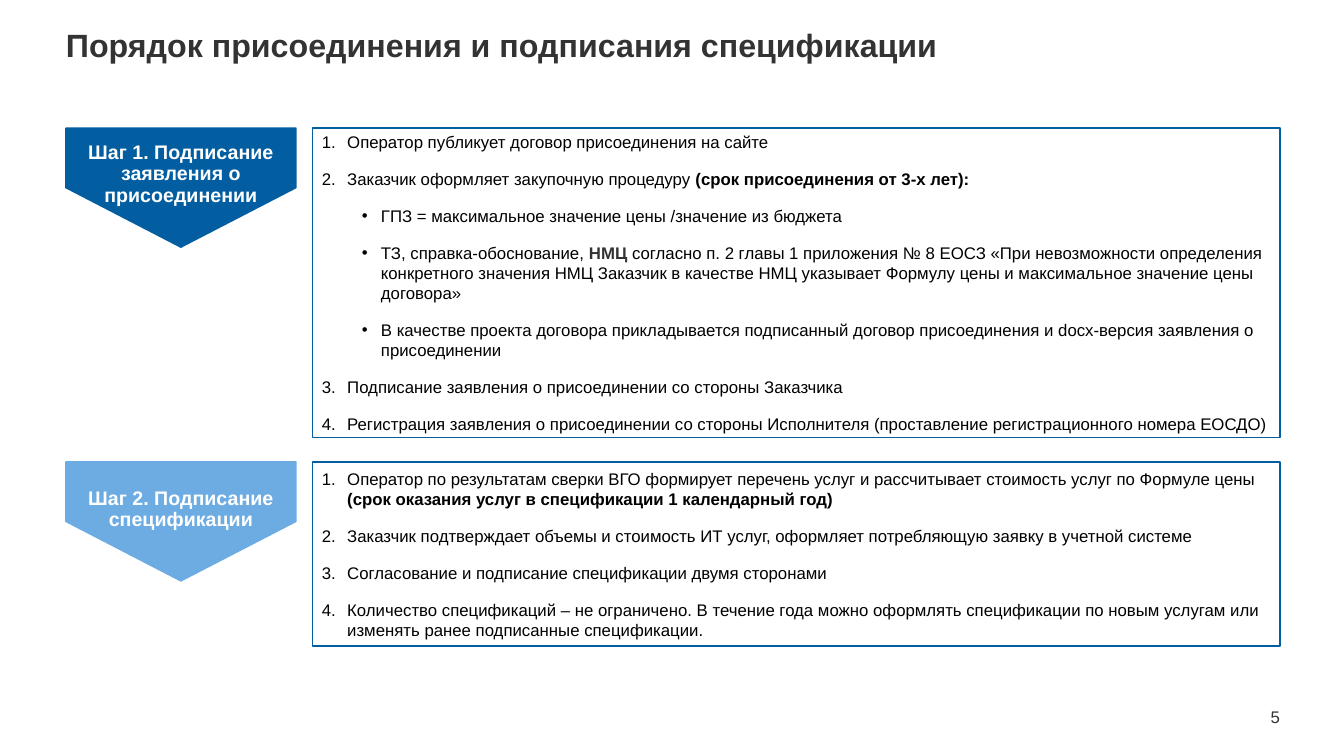
import dataclasses
import typing

import lxml.etree
import pptx
import pptx.dml.color
import pptx.enum.text
import pptx.oxml.ns
import pptx.shapes.autoshape
import pptx.slide
import pptx.text.text
import pptx.util

Cm = pptx.util.Cm
Pt = pptx.util.Pt
Align = pptx.enum.text.PP_ALIGN
Anchor = pptx.enum.text.MSO_ANCHOR
qn = pptx.oxml.ns.qn

FONT = "Arial"
DARK_BLUE, LIGHT_BLUE = "025EA1", "6CACE3"
WHITE, BLACK, GRAY = "FFFFFF", "000000", "333333"
ARROW_LEFT, ARROW_WIDTH, ARROW_HEIGHT = 1.66, 5.8, 3.0
LIST_LEFT, LIST_WIDTH = 7.88, 24.38
RIGHT_EDGE = LIST_LEFT + LIST_WIDTH


@dataclasses.dataclass
class Span:
    text: str
    bold: bool = False
    color: str = BLACK


@dataclasses.dataclass
class Item:
    spans: list[Span]
    start: int = 1
    bulleted: bool = False


@dataclasses.dataclass
class Step:
    label: str
    color: str
    top: float
    height: float
    bottom_inset: float
    items: list[Item]


STEPS = [
    Step("Шаг 1. Подписание заявления о присоединении", DARK_BLUE, 3.23, 7.8, 0.69, [
        Item([Span("Оператор публикует договор присоединения на сайте")]),
        Item([Span("Заказчик оформляет закупочную процедуру "),
              Span("(срок присоединения от 3-х лет):", bold=True)]),
        Item([Span("ГПЗ = максимальное значение цены /значение из бюджета")], bulleted=True),
        Item([Span("ТЗ, справка-обоснование, "),
              Span("НМЦ ", bold=True, color=GRAY),
              Span("согласно п. 2 главы 1 приложения № 8 ЕОСЗ «При невозможности определения "
                   "конкретного значения НМЦ Заказчик в качестве НМЦ указывает Формулу цены "
                   "и максимальное значение цены договора»")], bulleted=True),
        Item([Span("В качестве проекта договора прикладывается подписанный договор "
                   "присоединения и docx-версия заявления о присоединении")], bulleted=True),
        Item([Span("Подписание заявления о присоединении со стороны Заказчика")], start=3),
        Item([Span("Регистрация заявления о присоединении со стороны Исполнителя "
                   "(проставление регистрационного номера ЕОСДО)")], start=3),
    ]),
    Step("Шаг 2. Подписание спецификации", LIGHT_BLUE, 11.64, 4.64, 0.64, [
        Item([Span("Оператор по результатам сверки ВГО формирует перечень услуг "
                   "и рассчитывает стоимость услуг по Формуле цены "),
              Span("(срок оказания услуг в спецификации 1 календарный год)", bold=True)]),
        Item([Span("Заказчик подтверждает объемы и стоимость ИТ услуг, "
                   "оформляет потребляющую заявку в учетной системе")]),
        Item([Span("Согласование и подписание спецификации двумя сторонами")]),
        Item([Span("Количество спецификаций – не ограничено. В течение года можно оформлять "
                   "спецификации по новым услугам или изменять ранее подписанные спецификации.")]),
    ]),
]


def rgb(value: str) -> pptx.dml.color.RGBColor:
    return pptx.dml.color.RGBColor.from_string(value)


def add_span(para: pptx.text.text._Paragraph, text: str, *, size: float = 12,
             color: str = BLACK, bold: bool = False) -> None:
    span = para.add_run()
    span.text = text
    span.font.name = FONT
    span.font.size = Pt(size)
    span.font.bold = bold
    span.font.color.rgb = rgb(color)


def place(box: typing.Any, left: float, top: float, width: float, height: float) -> None:
    box.left, box.top, box.width, box.height = Cm(left), Cm(top), Cm(width), Cm(height)


def set_frame(frame: pptx.text.text.TextFrame, anchor: Anchor,
              insets: tuple[float, float, float, float] = (0, 0, 0, 0)) -> None:
    frame.word_wrap = True
    frame.auto_size = pptx.enum.text.MSO_AUTO_SIZE.NONE
    frame.vertical_anchor = anchor
    (frame.margin_left, frame.margin_top,
     frame.margin_right, frame.margin_bottom) = map(Cm, insets)


def paint(box: typing.Any, fill: str, line: str) -> None:
    box.fill.solid()
    box.fill.fore_color.rgb = rgb(fill)
    box.line.color.rgb = rgb(line)
    box.line.width = Pt(1)


def set_marker(para: pptx.text.text._Paragraph, item: Item) -> None:
    properties = para._p.get_or_add_pPr()
    left, indent = (1.49, -0.48) if item.bulleted else (0.64, -0.64)
    properties.set("marL", str(Cm(left)))
    properties.set("indent", str(Cm(indent)))
    lxml.etree.SubElement(properties, qn("a:buFont"), typeface=FONT)
    if item.bulleted:
        lxml.etree.SubElement(properties, qn("a:buChar"), char="•")
    else:
        number = lxml.etree.SubElement(properties, qn("a:buAutoNum"), type="arabicPeriod")
        if item.start > 1:
            number.set("startAt", str(item.start))


def fill_list(box: typing.Any, step: Step) -> None:
    place(box, LIST_LEFT, step.top, LIST_WIDTH, step.height)
    paint(box, WHITE, DARK_BLUE)
    frame = box.text_frame
    set_frame(frame, Anchor.MIDDLE, (0.23, 0.1, 0.1, 0.1))
    for index, item in enumerate(step.items):
        para = frame.add_paragraph() if index else frame.paragraphs[0]
        set_marker(para, item)
        para.alignment = Align.LEFT
        para.space_before = Pt(6 if index else 0)
        para.space_after = Pt(6)
        for span in item.spans:
            add_span(para, span.text, color=span.color, bold=span.bold)


def draw_arrow(page: pptx.slide.Slide, step: Step) -> None:
    right, middle = ARROW_LEFT + ARROW_WIDTH, ARROW_LEFT + ARROW_WIDTH / 2
    shoulder = step.top + ARROW_HEIGHT / 2
    outline = [(right, shoulder), (middle, step.top + ARROW_HEIGHT),
               (ARROW_LEFT, shoulder), (ARROW_LEFT, step.top)]
    builder = page.shapes.build_freeform(Cm(right), Cm(step.top))
    builder.add_line_segments([(Cm(x), Cm(y)) for x, y in outline], close=True)
    arrow: pptx.shapes.autoshape.Shape = builder.convert_to_shape()
    arrow.shadow.inherit = False
    paint(arrow, step.color, step.color)
    set_frame(arrow.text_frame, Anchor.MIDDLE, (0.03, 0.03, 0.03, step.bottom_inset))
    para = arrow.text_frame.paragraphs[0]
    para.alignment = Align.CENTER
    para.line_spacing = 0.9
    add_span(para, step.label, size=14, color=WHITE, bold=True)


def main() -> None:
    deck = pptx.Presentation()
    deck.slide_width, deck.slide_height = Cm(33.87), Cm(19.05)
    page = deck.slides.add_slide(deck.slide_layouts.get_by_name("Two Content"))

    title = page.shapes.title
    place(title, ARROW_LEFT, 0.64, 22.8, 2)
    set_frame(title.text_frame, Anchor.TOP)
    heading = title.text_frame.paragraphs[0]
    heading.alignment = Align.LEFT
    add_span(heading, "Порядок присоединения и подписания спецификации",
             size=23, color=GRAY, bold=True)

    bodies = [box for box in page.placeholders if box.placeholder_format.idx > 0]
    for body, step in zip(bodies, STEPS):
        fill_list(body, step)
        draw_arrow(page, step)

    number = page.shapes.add_textbox(Cm(RIGHT_EDGE - 1.27), Cm(17.73), Cm(1.27), Cm(0.6))
    set_frame(number.text_frame, Anchor.BOTTOM)
    para = number.text_frame.paragraphs[0]
    para.alignment = Align.RIGHT
    para.line_spacing = 0.9
    add_span(para, "5", color=GRAY)

    deck.save("out.pptx")


if __name__ == "__main__":
    main()
